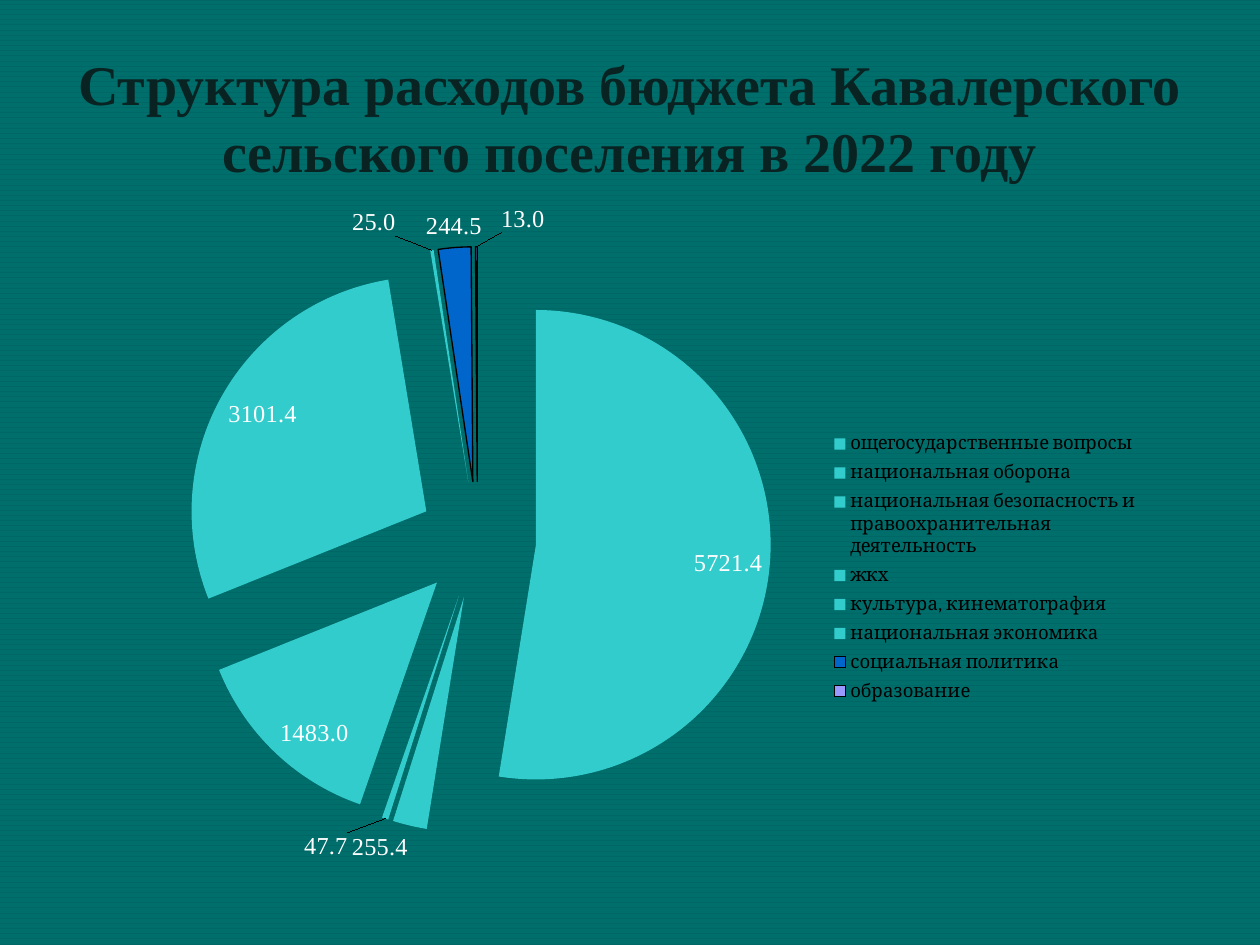
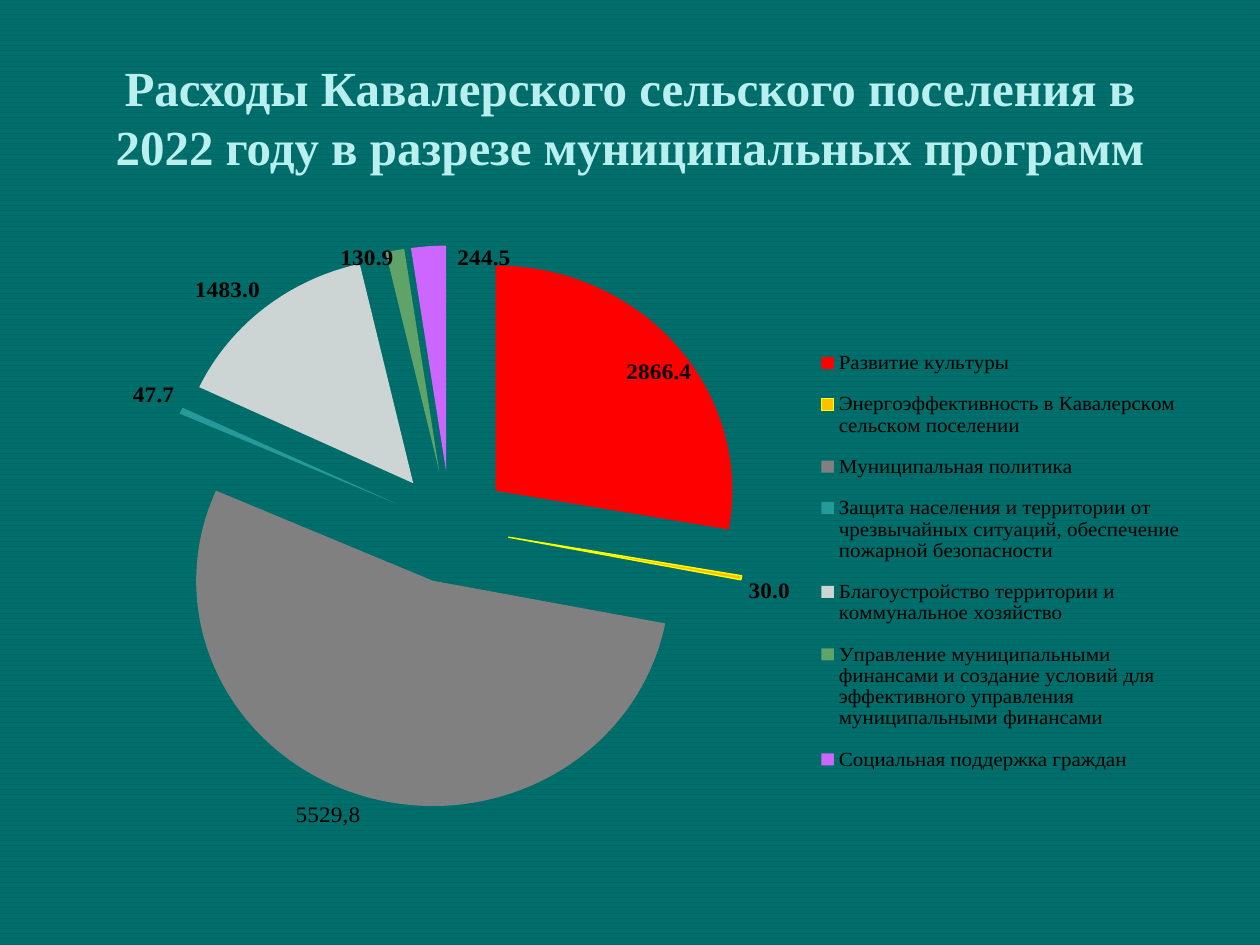
from dataclasses import dataclass

from lxml import etree
from pptx import Presentation, util as u
from pptx.chart.data import CategoryChartData
from pptx.dml.color import RGBColor
from pptx.enum import chart as ch, dml, text
from pptx.oxml.ns import qn


@dataclass(frozen=True)
class Theme:
    stripe: str = "006E6B"
    ground: str = "006666"
    dark: str = "082322"
    pale: str = "B9EFEE"
    black: str = "000000"
    white: str = "FFFFFF"
    aqua: str = "33CCCC"
    yellow: str = "FFFF00"
    font: str = "Times New Roman"
    legend_font: str = "Cambria"
    title_large: float = 32
    title_small: float = 28
    label_large: float = 13.9
    label_small: float = 13.3
    legend_large: float = 12
    legend_small: float = 10.6


THEME = Theme()
EXPLOSION = 25


def set_font(font, size, color, bold=False, name=THEME.font):
    values = {"name": name, "size": u.Pt(size), "bold": bold}
    for key, value in values.items():
        setattr(font, key, value)
    font.color.rgb = RGBColor.from_string(color)


def manual_layout(x, y, w=None, h=None, inner=False, edge=True):
    layout = etree.Element(qn("c:layout"))
    manual = etree.SubElement(layout, qn("c:manualLayout"))
    values = {"layoutTarget": "inner" if inner else None,
              "xMode": "edge" if edge else None,
              "yMode": "edge" if edge else None,
              "x": x, "y": y, "w": w, "h": h}
    for tag, value in values.items():
        if value is not None:
            etree.SubElement(manual, qn(f"c:{tag}")).set("val", str(value))
    return layout


def place(parent, index, layout):
    for old in parent.findall(qn("c:layout")):
        parent.remove(old)
    parent.insert(index, layout)


class Deck:
    def __init__(self, theme):
        self.theme = theme
        self.prs = Presentation()
        self.prs.slide_width = u.Inches(10)
        self.prs.slide_height = u.Inches(7.5)
        self.s = None

    def slide(self):
        self.s = self.prs.slides.add_slide(self.prs.slide_layouts[6])
        fill = self.s.background.fill
        fill.patterned()
        fill.pattern = dml.MSO_PATTERN.DARK_HORIZONTAL
        fill.fore_color.rgb = RGBColor.from_string(self.theme.stripe)
        fill.back_color.rgb = RGBColor.from_string(self.theme.ground)

    def title(self, words, size, color):
        box = self.s.shapes.add_textbox(u.Inches(0.5), u.Inches(0.3),
                                        u.Inches(9), u.Inches(1.25))
        tf = box.text_frame
        tf.word_wrap = True
        tf.vertical_anchor = text.MSO_ANCHOR.MIDDLE
        p = tf.paragraphs[0]
        p.alignment = text.PP_ALIGN.CENTER
        r = p.add_run()
        r.text = words
        set_font(r.font, size, color, True)

    def pie(self, box, slices, plot, legend, label, legend_text,
            inside=(), shifts=None, outlines=None, custom=None):
        data = CategoryChartData(number_format="0.0")
        data.categories = [name for name, _, _ in slices]
        data.add_series("Series 1", [value for _, value, _ in slices])
        chart = self.s.shapes.add_chart(
            ch.XL_CHART_TYPE.PIE, *map(u.Inches, box), data).chart
        root = chart._chartSpace
        chart.has_title = False
        set_font(chart.font, label["size"], label["color"])
        pie = chart.plots[0]
        pie.vary_by_categories = True
        series = pie.series[0]

        labels = series.data_labels
        formats = {"show_value": True, "number_format": "0.0",
                   "number_format_is_linked": False,
                   "position": ch.XL_LABEL_POSITION.OUTSIDE_END}
        for key, value in formats.items():
            setattr(labels, key, value)
        set_font(labels.font, **label)

        for i, (_, _, color) in enumerate(slices):
            self.pie_slice(series.points[i], color, (outlines or {}).get(i))
        for i in inside:
            dl = series.points[i].data_label
            set_font(dl.font, **label)
            dl.position = ch.XL_LABEL_POSITION.INSIDE_END
        for i, words in (custom or {}).items():
            dl = series.points[i].data_label
            p = dl.text_frame.paragraphs[0]
            r = p.add_run()
            r.text = words
            set_font(r.font, label["size"], label["color"])
            dl.position = ch.XL_LABEL_POSITION.OUTSIDE_END
        for i, (dx, dy) in (shifts or {}).items():
            dl = series.points[i].data_label
            set_font(dl.font, **label)
            dl.position = ch.XL_LABEL_POSITION.OUTSIDE_END
            node = root.xpath(f'.//c:dLbl[c:idx/@val="{i}"]')[0]
            place(node, 1, manual_layout(dx, dy, edge=False))

        explosion = etree.Element(qn("c:explosion"))
        explosion.set("val", str(EXPLOSION))
        root.xpath(".//c:ser/c:tx")[0].addnext(explosion)

        chart.has_legend = True
        chart.legend.position = ch.XL_LEGEND_POSITION.RIGHT
        chart.legend.include_in_layout = False
        set_font(chart.legend.font, **legend_text)
        place(root.xpath(".//c:plotArea")[0], 0,
              manual_layout(*plot, inner=True))
        place(root.xpath(".//c:legend")[0], 1, manual_layout(*legend))

    def pie_slice(self, point, color, outline):
        fill = point.format.fill
        fill.solid()
        fill.fore_color.rgb = RGBColor.from_string(color)
        line = point.format.line
        if outline:
            line.color.rgb = RGBColor.from_string(outline)
            line.width = u.Pt(0.77)
        else:
            line.fill.background()


def main():
    t = THEME
    deck = Deck(t)

    deck.slide()
    deck.title("Структура расходов бюджета Кавалерского сельского поселения "
               "в 2022 году", t.title_large, t.dark)
    deck.pie(
        (0.41, 1.52, 9.26, 5.48),
        [("ощегосударственные вопросы", 5721.4, t.aqua),
         ("национальная оборона", 255.4, t.aqua),
         ("национальная безопасность и правоохранительная деятельность",
          47.7, t.aqua),
         ("жкх", 1483, t.aqua),
         ("культура, кинематография", 3101.4, t.aqua),
         ("национальная экономика", 25, t.aqua),
         ("социальная политика", 244.5, "0066CC"),
         ("образование", 13, "9999FF")],
        plot=(0.11, 0.08, 0.51, 0.85),
        legend=(0.66, 0.34, 0.28, 0.41),
        label={"size": t.label_large, "color": t.white},
        legend_text={"size": t.legend_small, "color": t.black,
                     "name": t.legend_font},
        inside=(0, 3, 4),
        shifts={2: (-0.03, 0.01), 5: (-0.03, -0.01), 7: (0.04, -0.01)},
        outlines={6: t.black, 7: t.black})

    deck.slide()
    deck.pie(
        (0.59, 1.7, 8.91, 5.16),
        [("Развитие культуры", 2866.4, "FF0000"),
         ("Энергоэффективность в Кавалерском сельском поселении",
          30, "FFC000"),
         ("Муниципальная политика", 5529.8, "808080"),
         ("Защита населения и территории от чрезвычайных ситуаций, "
          "обеспечение пожарной безопасности", 47.7, "269999"),
         ("Благоустройство территории и коммунальное хозяйство",
          1483, "CCD4D4"),
         ("Управление муниципальными финансами и создание условий для "
          "эффективного управления муниципальными финансами",
          130.9, "5FA369"),
         ("Социальная поддержка граждан", 244.5, "CC66FF")],
        plot=(0.03, 0, 0.61, 0.91),
        legend=(0.66, 0.14, 0.33, 0.74),
        label={"size": t.label_small, "color": t.black, "bold": True},
        legend_text={"size": t.legend_large, "color": t.black},
        shifts={0: (-0.05, 0.07), 5: (0, 0.02), 6: (0.05, 0.03)},
        outlines={1: t.yellow},
        custom={2: "5529,8"})
    deck.title("Расходы Кавалерского сельского поселения в 2022 году "
               "в разрезе муниципальных программ", t.title_small, t.pale)

    deck.prs.save("out.pptx")


if __name__ == "__main__":
    main()
